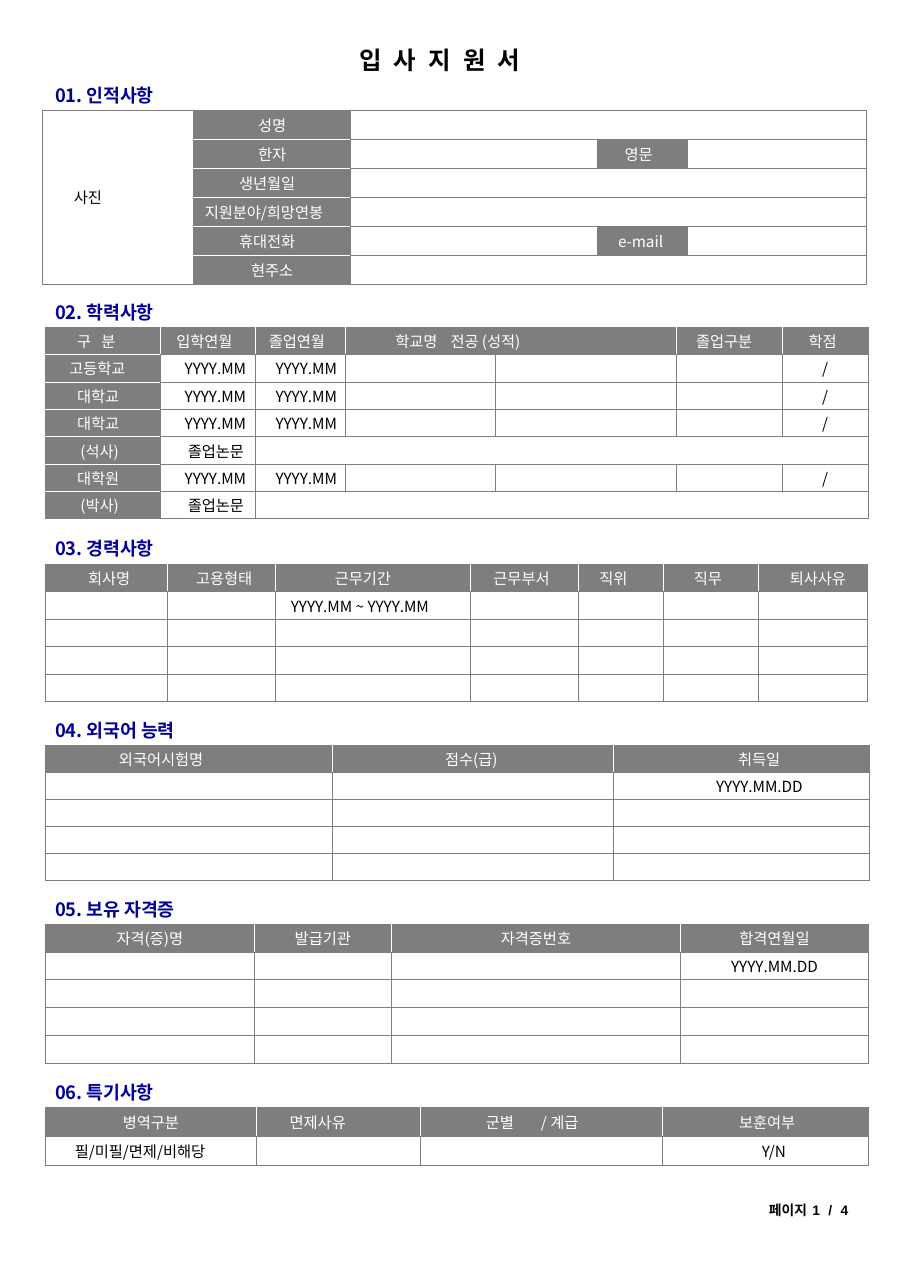
from dataclasses import dataclass

from lxml.etree import SubElement
from pptx import Presentation
from pptx.dml.color import RGBColor
from pptx.enum.text import MSO_ANCHOR, PP_ALIGN
from pptx.oxml import parse_xml
from pptx.oxml.ns import nsdecls, qn
from pptx.util import Inches, Pt

NAVY = RGBColor(0x00, 0x00, 0x99)
GRAY = RGBColor(0x7E, 0x7E, 0x7E)
WHITE = RGBColor(0xFF, 0xFF, 0xFF)
BLACK = RGBColor(0x00, 0x00, 0x00)
KOREAN_FONT = "Noto Sans CJK KR"
GRID_COLUMNS, GRID_ROWS = 826, 1169
THESIS_ROWS = (4, 6)

YEAR_MONTH = (("YYY", 0), ("Y", -1.1), (".MM", 0))
FULL_DATE = (("YYY", 0), ("Y", -1.1), (".MM.DD", 0))
WORK_PERIOD = (("YYY", 0), ("Y", -1.1), (".MM ~ YYY", 0), ("Y", -1.1), (".MM", 0))


@dataclass(frozen=True)
class Entry:
    words: object
    indent: int = 0
    centred: bool = False
    tab: int = 0
    dark: bool = False


def label(words, indent=0, tab=0):
    return Entry(words, indent, indent == 0, tab, True)


def header(*labels):
    return {(0, column): label(*details) for column, details in enumerate(labels)}


class FormPage:
    def __init__(self, deck):
        self.page = deck.slides.add_slide(deck.slide_layouts[6])
        self.column = deck.slide_width // GRID_COLUMNS
        self.row = deck.slide_height // GRID_ROWS

    def add_spans(self, para, words, size, color, font=KOREAN_FONT, bold=False):
        spans = ((words, 0),) if isinstance(words, str) else words
        for words_part, spacing in spans:
            span = para.add_run()
            span.text = words_part
            span.font.name = font
            span.font.size = Pt(size)
            span.font.bold = bold
            span.font.color.rgb = color
            properties = span._r.get_or_add_rPr()
            SubElement(properties, qn("a:ea"), typeface=KOREAN_FONT)
            if spacing:
                properties.set("spc", str(round(spacing * 100)))

    def text(self, left, top, width, height, words, size, color, font=KOREAN_FONT):
        box = self.page.shapes.add_textbox(
            left * self.column, top * self.row, width * self.column, height * self.row)
        frame = box.text_frame
        frame.word_wrap = True
        frame.margin_left = frame.margin_right = 0
        frame.margin_top = frame.margin_bottom = 0
        self.add_spans(frame.paragraphs[0], words, size, color, font, True)

    def fill_cell(self, cell, entry):
        cell.margin_left = cell.margin_right = 0
        cell.margin_top = cell.margin_bottom = 0
        cell.vertical_anchor = MSO_ANCHOR.MIDDLE
        para = cell.text_frame.paragraphs[0]
        if entry and entry.dark:
            cell.fill.solid()
            cell.fill.fore_color.rgb = GRAY
        else:
            cell.fill.background()
        if entry and entry.words:
            properties = para._p.get_or_add_pPr()
            properties.set("marL", str(entry.indent * self.column))
            properties.set("indent", "0")
            para.alignment = PP_ALIGN.CENTER if entry.centred else PP_ALIGN.LEFT
            if entry.tab:
                stops = SubElement(properties, qn("a:tabLst"))
                SubElement(stops, qn("a:tab"), pos=str(entry.tab * self.column), algn="l")
            self.add_spans(para, entry.words, 10, WHITE if entry.dark else BLACK)
        else:
            SubElement(para._p, qn("a:endParaRPr"), sz="1000")

    def border_cell(self, cell, place, entries, line):
        def is_dark(spot):
            return spot in entries and entries[spot].dark

        row, column = place
        sides = {"L": (row, column - 1), "R": (row, column + 1),
                 "T": (row - 1, column), "B": (row + 1, column)}
        for order, (side, neighbour) in enumerate(sides.items()):
            color = WHITE if is_dark(place) and is_dark(neighbour) else GRAY
            cell._tc.get_or_add_tcPr().insert(order, parse_xml(
                f'<a:ln{side} {nsdecls("a")} w="{Pt(line)}"><a:solidFill>'
                f'<a:srgbClr val="{color}"/></a:solidFill></a:ln{side}>'))

    def section(self, number, title, top, widths, rows, height, entries,
                merges=(), left=41, line=0.75):
        self.text(50, top - 24, 444, 20, ((f"{number:02d}. ", -0.1), (title, 0)), 12, NAVY)
        table = self.page.shapes.add_table(
            rows, len(widths), left * self.column, top * self.row,
            sum(widths) * self.column, height * self.row).table
        table.first_row = table.horz_banding = False
        for column, width in zip(table.columns, widths):
            column.width = width * self.column
        for row in table.rows:
            row.height = height * self.row // rows
        for row in range(rows):
            for column in range(len(widths)):
                place = row, column
                self.fill_cell(table.cell(*place), entries.get(place))
                self.border_cell(table.cell(*place), place, entries, line)
        for first, last in merges:
            table.cell(*first).merge(table.cell(*last))


def personal_entries():
    labels = (("성명",), ("한자",), ("생년월일", 41), ("지원분야/희망연봉", 10),
              ("휴대전화", 41), ("현주소",))
    entries = {(row, 1): label(*details) for row, details in enumerate(labels)}
    entries[0, 0] = Entry("사진", 28)
    entries[1, 3] = label("영문", 25)
    entries[4, 3] = label("e-mail", 19)
    return entries


def education_entries():
    entries = header(((("구 ", 2.2), ("분", 0)), 29), ("입학연월", 14), ("졸업연월", 12),
                     ("학교명\t전공 (성적)", 45, 175), ("",), ("졸업구분", 18), ("학점", 24))
    schools = (("고등학교", 22), ("대학교", 29), ("대학교", 29), ("(석사)", 32),
               ("대학원", 29), ("(박사)", 32))
    for row, details in enumerate(schools, 1):
        entries[row, 0] = label(*details)
        if row in THESIS_ROWS:
            entries[row, 1] = Entry("졸업논문", 14, True)
        else:
            entries[row, 1] = Entry(YEAR_MONTH, 13, True)
            entries[row, 2] = Entry(YEAR_MONTH, 10, True)
            entries[row, 6] = Entry("/", 0, True)
    return entries


def main():
    deck = Presentation()
    deck.slide_width, deck.slide_height = Inches(8.26), Inches(11.69)
    form = FormPage(deck)
    form.text(326, 41, 186, 27, (("입 사 지 원 서", 2.2),), 16, BLACK, "Arial")

    form.section(1, "인적사항", 100, (137, 142, 224, 82, 163), 6, 158, personal_entries(),
                 [((0, 0), (5, 0))] + [((row, 2), (row, 4)) for row in (0, 2, 3, 5)], left=39)
    form.section(2, "학력사항", 297, (105, 86, 82, 136, 164, 96, 78), 7, 174,
                 education_entries(),
                 [((0, 3), (0, 4))] + [((row, 2), (row, 6)) for row in THESIS_ROWS], line=0.58)
    form.section(3, "경력사항", 512, (111, 98, 177, 98, 77, 87, 99), 5, 125,
                 header(("회사명", 39), ("고용형태", 26), ("근무기간", 54), ("근무부서", 21),
                        ("직위", 19), ("직무", 28), ("퇴사사유", 28))
                 | {(1, 2): Entry(WORK_PERIOD, 14)})
    form.section(4, "외국어 능력", 677, (261, 255, 232), 5, 122,
                 header(("외국어시험명", 67), ("점수(급)", 102), ("취득일", 113))
                 | {(1, 2): Entry(FULL_DATE, 93)})
    form.section(5, "보유 자격증", 839, (190, 124, 263, 170), 5, 126,
                 header(("자격(증)명",), ("발급기관",), ("자격증번호",), ("합격연월일",))
                 | {(1, 3): Entry(FULL_DATE, 0, True)})
    form.section(6, "특기사항", 1005, (192, 149, 219, 187), 2, 53,
                 header(("병역구분",), ("면제사유", 30), ("군별\t/ 계급", 59, 101),
                        ("보훈여부", 70))
                 | {(1, 0): Entry("필/미필/면제/비해당", 27), (1, 3): Entry("Y/N", 16, True)})

    form.text(698, 1091, 100, 15, (("페이지", 0), (" 1 / ", 1.5), ("4", -0.5)),
              9, BLACK, "Arial")
    deck.save("out.pptx")


if __name__ == "__main__":
    main()
